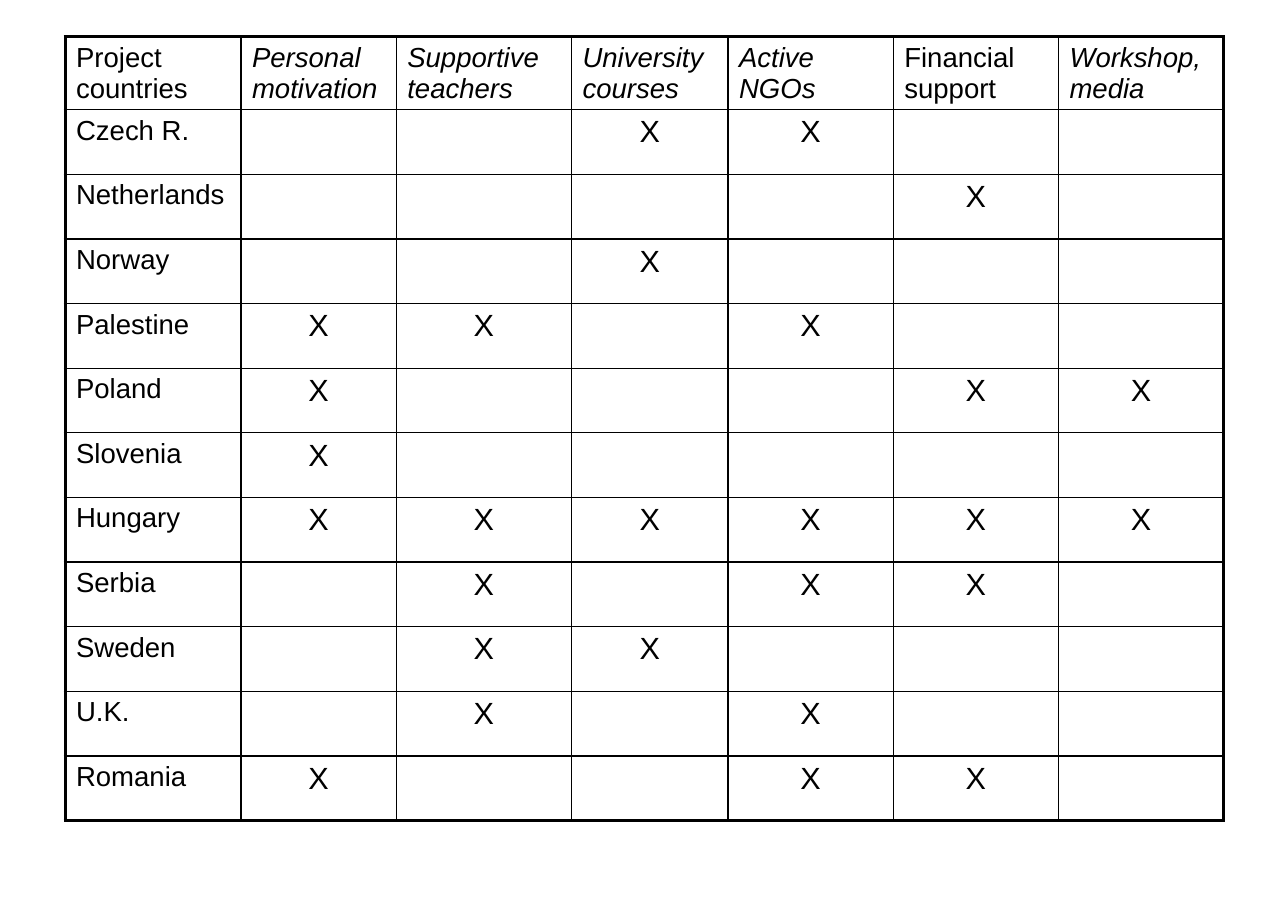
from typing import NamedTuple

from lxml import etree
from pptx import Presentation
from pptx import util as u
from pptx.dml import color
from pptx.enum import text
from pptx.oxml import ns

HUES = {"ink": "000000"}
FONT = "Arial"
THIN, THICK = 1, 2.25


class Head(NamedTuple):
    name: str
    width: float
    slant: bool = True


class Land(NamedTuple):
    name: str
    marks: str  # one sign per factor: X for yes, a dot for no


HEADS = [
    Head("Project countries", 4.06, False),
    Head("Personal motivation", 3.58),
    Head("Supportive teachers", 4.04),
    Head("University courses", 3.61),
    Head("Active NGOs", 3.81),
    Head("Financial support", 3.81, False),
    Head("Workshop, media", 3.81),
]
LANDS = [
    Land("Czech R.", "..XX.."),
    Land("Netherlands", "....X."),
    Land("Norway", "..X..."),
    Land("Palestine", "XX.X.."),
    Land("Poland", "X...XX"),
    Land("Slovenia", "X....."),
    Land("Hungary", "XXXXXX"),
    Land("Serbia", ".X.XX."),
    Land("Sweden", ".XX..."),
    Land("U.K.", ".X.X.."),
    Land("Romania", "X..XX."),
]
TOP_ROW, ROW = 1.67, 1.49


def write(cell, words: str, size: int = 18, slant: bool = False,
          align=text.PP_ALIGN.LEFT) -> None:
    para = cell.text_frame.paragraphs[0]
    para.text = words
    para.alignment = align
    for run in para.runs:
        run.font.name = FONT
        run.font.size = u.Pt(size)
        run.font.italic = slant
        run.font.color.rgb = color.RGBColor.from_string(HUES["ink"])


def edge(cell, side: str, width: float) -> None:
    props = cell._tc.get_or_add_tcPr()
    line = etree.SubElement(props, ns.qn(f"a:ln{side}"), w=str(u.Pt(width)))
    fill = etree.SubElement(line, ns.qn("a:solidFill"))
    etree.SubElement(fill, ns.qn("a:srgbClr"), val=HUES["ink"])


def frame(cell, outer: dict[str, bool]) -> None:
    for side, thick in outer.items():
        edge(cell, side, THICK if thick else THIN)
    cell.fill.background()


def main() -> None:
    deck = Presentation()
    deck.slide_width, deck.slide_height = u.Cm(29.7), u.Cm(21)
    slide = deck.slides.add_slide(deck.slide_layouts[6])

    # Empty grid
    rows, cols = len(LANDS) + 1, len(HEADS)
    wide = sum(head.width for head in HEADS)
    high = TOP_ROW + ROW * len(LANDS)
    grid = slide.shapes.add_table(rows, cols, u.Cm(1.5), u.Cm(0.85),
                                  u.Cm(wide), u.Cm(high)).table
    grid.first_row = grid.horz_banding = False
    for r, row in enumerate(grid.rows):
        row.height = u.Cm(ROW if r else TOP_ROW)
        for c, cell in enumerate(row.cells):
            frame(cell, {"L": c == 0, "R": c == cols - 1,
                         "T": r == 0, "B": r == rows - 1})

    # Factors across the top
    for c, head in enumerate(HEADS):
        grid.columns[c].width = u.Cm(head.width)
        write(grid.cell(0, c), head.name, slant=head.slant)

    # Countries and their marks
    for r, land in enumerate(LANDS, 1):
        write(grid.cell(r, 0), land.name)
        for c, mark in enumerate(land.marks, 1):
            if mark == "X":
                write(grid.cell(r, c), mark, 20, align=text.PP_ALIGN.CENTER)

    deck.save("out.pptx")


if __name__ == "__main__":
    main()
